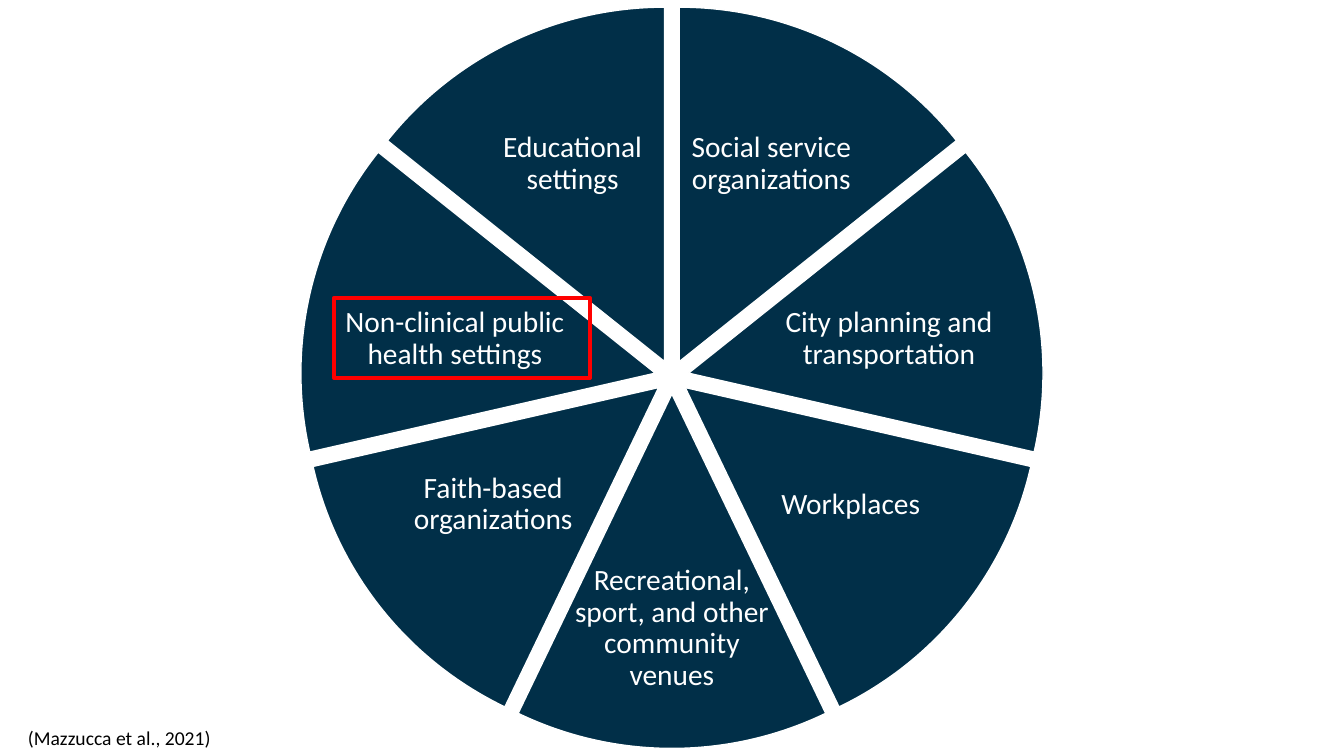
import math

from lxml import etree
from pptx import Presentation
from pptx import util as u
from pptx.dml.color import RGBColor
from pptx.enum import shapes, text
from pptx.oxml import ns

EMU_PER_PX = 914400 / 100.8
SLIDE_W, SLIDE_H = 1344, 756
CENTER_X, CENTER_Y = 672, 377
DIAMETER = 709
RADIUS = DIAMETER / 2
GAP = 17  # distance each wedge is pushed out from the center
COLORS = {"navy": "012F48", "white": "FFFFFF", "red": "FF0000", "black": "000000"}

# Label insets (left, top, right, bottom) within the circle, right half from the top
UPPER, MIDDLE, LOWER, BOTTOM = [
    (336, 61, 152, 457),
    (433, 232, 32, 301),
    (409, 378, 78, 144),
    (246, 501, 246, 32),
]


def mirrored(insets):
    left, top, right, bottom = insets
    return right, top, left, bottom


# Clockwise from the top
WEDGES = [
    ("Social service organizations", UPPER),
    ("City planning and transportation", MIDDLE),
    ("Workplaces", LOWER),
    ("Recreational, sport, and other community venues", BOTTOM),
    ("Faith-based organizations", mirrored(LOWER)),
    ("Non-clinical public health settings", mirrored(MIDDLE)),
    ("Educational settings", mirrored(UPPER)),
]


def px(length):
    return u.Emu(round(length * EMU_PER_PX))


def color(name):
    return RGBColor.from_string(COLORS[name])


def write(frame, words, *, size, ink, align=None, spacing=None):
    frame.word_wrap = True
    para = frame.paragraphs[0]
    para.alignment = align
    para.line_spacing = spacing
    span = para.add_run()
    span.text = words
    span.font.name = "Calibri"
    span.font.size = u.Pt(size)
    span.font.color.rgb = color(ink)


def outline(shape, ink, width):
    shape.line.color.rgb = color(ink)
    shape.line.width = u.Pt(width)
    shape.shadow.inherit = False


def curve_wedge(wedge, start, sweep):
    """Give the wedge a frame as large as its circle and one curve for its rim."""
    handle = 4 / 3 * math.tan(sweep / 4)

    def rim(angle, pull=0):
        return (RADIUS * (1 + math.cos(angle) - pull * math.sin(angle)),
                RADIUS * (1 + math.sin(angle) + pull * math.cos(angle)))

    end = start + sweep
    steps = [
        ("a:moveTo", [rim(start)]),
        ("a:cubicBezTo", [rim(start, handle), rim(end, -handle), rim(end)]),
        ("a:lnTo", [(RADIUS, RADIUS)]),
        ("a:close", []),
    ]
    figure = next(wedge._element.iter(ns.qn("a:path")))
    for child in list(figure):
        figure.remove(child)
    for side in ("w", "h"):
        figure.set(side, str(px(DIAMETER)))
    for tag, points in steps:
        step = etree.SubElement(figure, ns.qn(tag))
        for x, y in points:
            etree.SubElement(step, ns.qn("a:pt"), x=str(px(x)), y=str(px(y)))


def add_wedge(page, index, label, insets):
    sweep = math.tau / len(WEDGES)
    start = index * sweep - math.pi / 2
    middle = start + sweep / 2
    left = CENTER_X + GAP * math.cos(middle) - RADIUS
    top = CENTER_Y + GAP * math.sin(middle) - RADIUS

    builder = page.shapes.build_freeform(0, 0)
    builder.add_line_segments([(px(DIAMETER), px(DIAMETER))], close=True)
    wedge = builder.convert_to_shape()
    wedge.left, wedge.top = px(left), px(top)
    wedge.width = wedge.height = px(DIAMETER)
    curve_wedge(wedge, start, sweep)
    wedge.fill.solid()
    wedge.fill.fore_color.rgb = color("navy")
    outline(wedge, "white", 1)

    frame = wedge.text_frame
    frame.vertical_anchor = text.MSO_ANCHOR.MIDDLE
    (frame.margin_left, frame.margin_top,
     frame.margin_right, frame.margin_bottom) = map(px, insets)
    write(frame, label, size=21, ink="white", align=text.PP_ALIGN.CENTER, spacing=0.9)


def add_highlight(page, left, top, width, height):
    box = page.shapes.add_shape(shapes.MSO_SHAPE.RECTANGLE,
                                px(left), px(top), px(width), px(height))
    box.fill.background()
    outline(box, "red", 3)


def add_citation(page, words, left, top, width, height):
    box = page.shapes.add_textbox(px(left), px(top), px(width), px(height))
    write(box.text_frame, words, size=14, ink="black")
    box.text_frame.auto_size = text.MSO_AUTO_SIZE.SHAPE_TO_FIT_TEXT


def main():
    deck = Presentation()
    deck.slide_width, deck.slide_height = px(SLIDE_W), px(SLIDE_H)
    page = deck.slides.add_slide(deck.slide_layouts[6])
    for index, (label, insets) in enumerate(WEDGES):
        add_wedge(page, index, label, insets)
    add_highlight(page, 334, 298, 256, 80)
    add_citation(page, "(Mazzucca et al., 2021)", 18, 721, 524, 34)
    deck.save("out.pptx")


if __name__ == "__main__":
    main()
